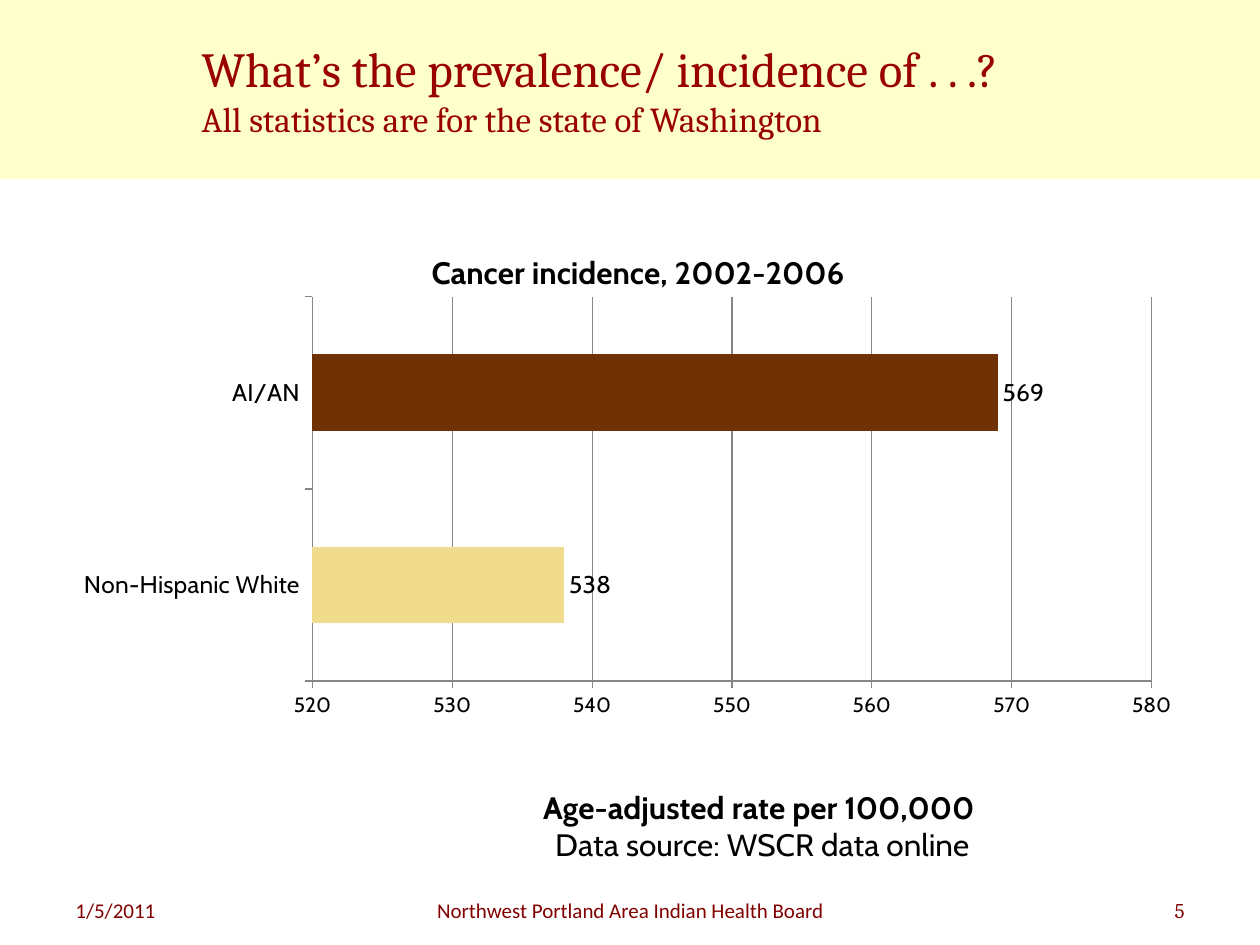
from lxml.etree import SubElement
from pptx import Presentation
from pptx.chart.data import CategoryChartData
from pptx.dml.color import RGBColor
from pptx.enum.chart import XL_CHART_TYPE, XL_LABEL_POSITION, XL_TICK_MARK
from pptx.enum.shapes import MSO_SHAPE
from pptx.enum.text import MSO_ANCHOR, PP_ALIGN
from pptx.oxml.ns import qn
from pptx.util import Pt

PX = 914400 / 126


def style(font, size, name, color, bold=False):
    font.size = Pt(size)
    font.name = name
    font.bold = bold
    font.color.rgb = RGBColor.from_string(color)


def place(element, index, **position):
    for old_layout in element.findall(qn("c:layout")):
        element.remove(old_layout)
    layout = SubElement(element, qn("c:layout"))
    element.insert(index, layout)
    manual = SubElement(layout, qn("c:manualLayout"))
    if "w" in position:
        SubElement(manual, qn("c:layoutTarget")).set("val", "inner")
    for axis in ("x", "y"):
        SubElement(manual, qn(f"c:{axis}Mode")).set("val", "edge")
    for key, value in position.items():
        SubElement(manual, qn(f"c:{key}")).set("val", str(value))


presentation = Presentation()
presentation.slide_width = int(1260 * PX)
presentation.slide_height = int(945 * PX)
slide = presentation.slides.add_slide(presentation.slide_layouts[5])

band = slide.shapes.add_shape(MSO_SHAPE.RECTANGLE, 0, 0, int(1260 * PX), int(179 * PX))
band.shadow.inherit = False
band.fill.solid()
band.fill.fore_color.rgb = RGBColor.from_string("FFFFCC")
band.line.fill.background()

title = slide.shapes.title
band._element.addnext(title._element)
title.left, title.top, title.width, title.height = (
    int(value * PX) for value in (189, 10, 1008, 158))
title.text_frame.vertical_anchor = MSO_ANCHOR.MIDDLE
paragraph = title.text_frame.paragraphs[0]
paragraph.alignment = PP_ALIGN.LEFT
run = paragraph.add_run()
run.text = "What’s the prevalence/ incidence of . . .?"
style(run.font, 28, "Cambria", "990000")
paragraph.add_line_break()
run = paragraph.add_run()
run.text = "All statistics are for the state of Washington"
style(run.font, 20, "Cambria", "990000")

footers = [
    (368, 525, "Northwest Portland Area Indian Health Board", "Calibri", PP_ALIGN.CENTER),
    (63, 294, "1/5/2011", "Calibri", PP_ALIGN.LEFT),
    (903, 294, "5", "Cambria", PP_ALIGN.RIGHT),
]
for left, width, text, font_name, alignment in footers:
    footer = slide.shapes.add_textbox(int(left * PX), int(891 * PX), int(width * PX), int(54 * PX))
    footer.text_frame.word_wrap = True
    paragraph = footer.text_frame.paragraphs[0]
    paragraph.alignment = alignment
    run = paragraph.add_run()
    run.text = text
    style(run.font, 12, font_name, "800000")

chart_data = CategoryChartData()
chart_data.categories = ["Non-Hispanic White", "AI/AN"]
chart_data.add_series("Series 1", (538, 569))
chart = slide.shapes.add_chart(
    XL_CHART_TYPE.BAR_CLUSTERED, int(63 * PX), int(220 * PX),
    int(1134 * PX), int(651 * PX), chart_data).chart
style(chart.font, 10, "Cabin", "000000")
chart.has_legend = False
chart.has_title = True
run = chart.chart_title.text_frame.paragraphs[0].add_run()
run.text = "Cancer incidence, 2002-2006"
style(run.font, 18, "Cabin", "000000", True)

category_axis = chart.category_axis
value_axis = chart.value_axis
for axis, size in ((category_axis, 14), (value_axis, 12)):
    axis.major_tick_mark = XL_TICK_MARK.OUTSIDE
    style(axis.tick_labels.font, size, "Cabin", "000000")
    axis.format.line.color.rgb = RGBColor.from_string("868686")
category_axis.has_major_gridlines = False
value_axis.minimum_scale = 520
value_axis.maximum_scale = 580
value_axis.major_unit = 10
value_axis.has_major_gridlines = True
value_axis.major_gridlines.format.line.color.rgb = RGBColor.from_string("868686")

axis_frame = value_axis.axis_title.text_frame
for number, (text, bold) in enumerate((
        ("Age-adjusted rate per 100,000 ", True), ("Data source: WSCR data online", False))):
    paragraph = axis_frame.add_paragraph() if number else axis_frame.paragraphs[0]
    run = paragraph.add_run()
    run.text = text
    style(run.font, 18, "Cabin", "000000", bold)

plot = chart.plots[0]
plot.gap_width = 150
plot.vary_by_categories = False
series = plot.series[0]
series.format.fill.solid()
series.format.fill.fore_color.rgb = RGBColor.from_string("3891A7")
for index, color in enumerate(("F1DB8C", "703204")):
    fill = series.points[index].format.fill
    fill.solid()
    fill.fore_color.rgb = RGBColor.from_string(color)
labels = series.data_labels
labels.show_value = True
labels.position = XL_LABEL_POSITION.OUTSIDE_END
style(labels.font, 14, "Cabin", "000000")

place(chart.chart_title._element, 1, x=0.32, y=0.04)
place(value_axis.axis_title._element, 1, x=0.42, y=0.88)
place(chart._chartSpace.chart.plotArea, 0, x=0.22, y=0.12, w=0.74, h=0.6)

presentation.save("out.pptx")
